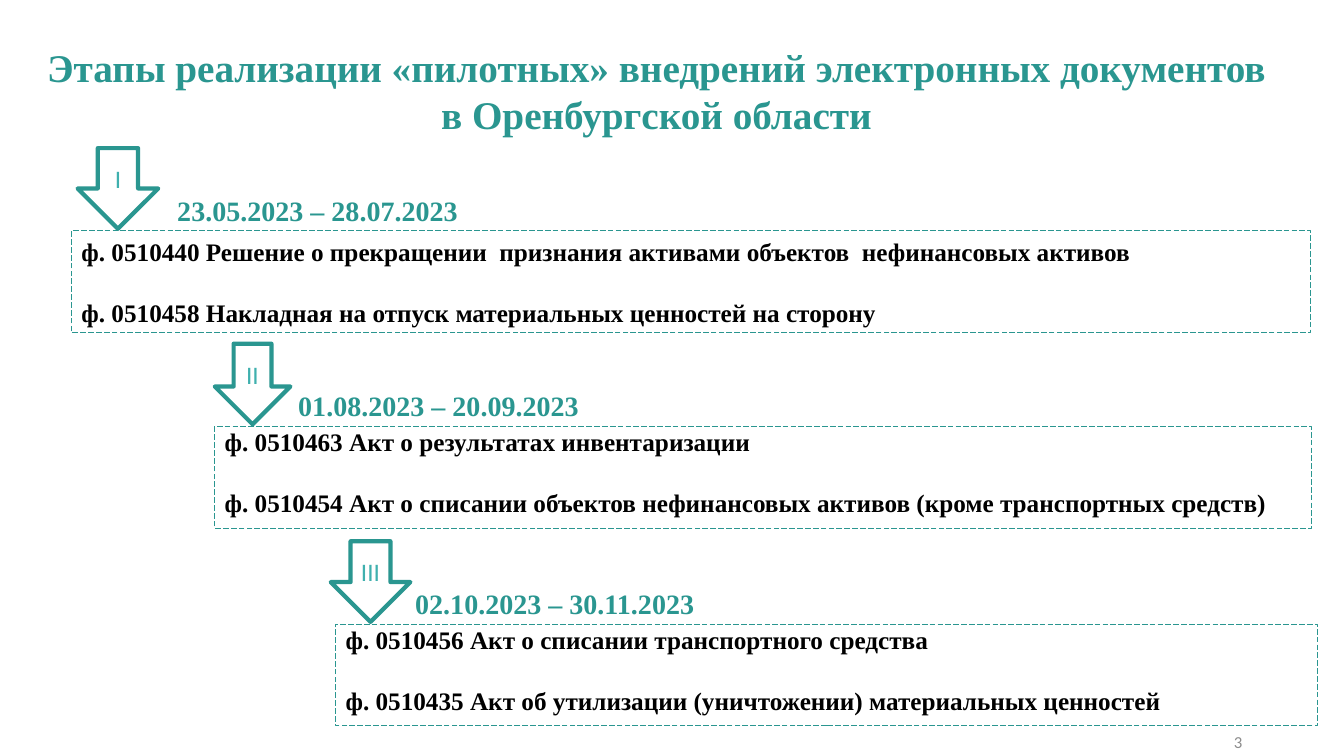
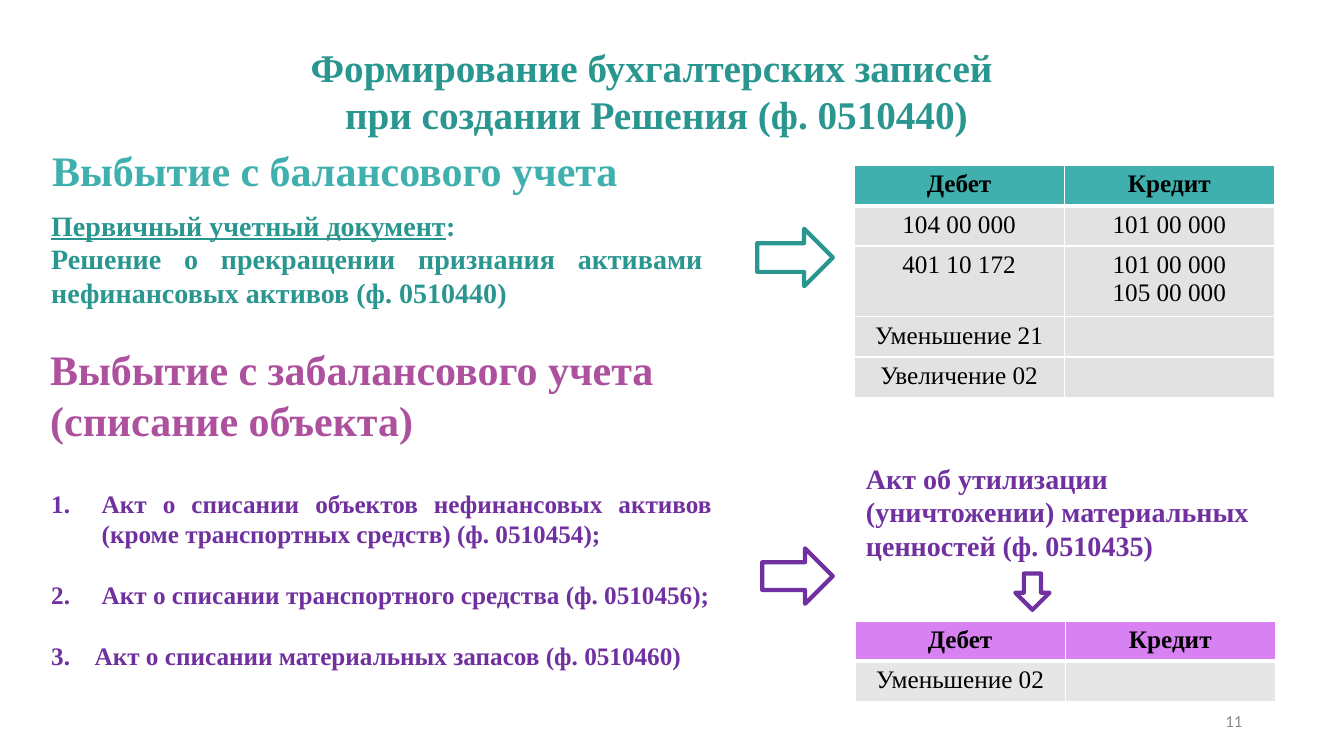
from lxml import etree
from pptx import Presentation
from pptx.dml.color import RGBColor
from pptx.enum.dml import MSO_LINE
from pptx.enum.shapes import MSO_SHAPE
from pptx.enum.text import MSO_ANCHOR, PP_ALIGN
from pptx.oxml.ns import qn
from pptx.util import Pt

LEFT, CENTER, RIGHT, JUSTIFY = PP_ALIGN.LEFT, PP_ALIGN.CENTER, PP_ALIGN.RIGHT, PP_ALIGN.JUSTIFY
TOP, MIDDLE = MSO_ANCHOR.TOP, MSO_ANCHOR.MIDDLE
DOWN_ARROW, RIGHT_ARROW, RECTANGLE = MSO_SHAPE.DOWN_ARROW, MSO_SHAPE.RIGHT_ARROW, MSO_SHAPE.RECTANGLE
LONG_DASH = MSO_LINE.LONG_DASH

EMU_PER_PX = 9144  # 100 px to the inch
SERIF, SANS = "Times New Roman", "Calibri"
COLORS = {
    "teal": "2A9690", "aqua": "3FB0AE", "plum": "AD509E", "purple": "7030A0",
    "lilac": "D881F3", "cell": "E2E2E2", "pale_cell": "E7E6E6",
    "black": "000000", "white": "FFFFFF", "gray": "8C8C8C",
}
TITLE_BOX = (20, 38, 1262, 104)
BLANK_LINE = 22  # points between separated paragraphs

STAGES_TITLE = ["Этапы реализации «пилотных» внедрений электронных документов",
                "в Оренбургской области"]
STAGES = [
    {"number": "I", "dates": "23.05.2023 – 28.07.2023",
     "forms": ["ф. 0510440 Решение о прекращении  признания активами объектов  нефинансовых активов",
               "ф. 0510458 Накладная на отпуск материальных ценностей на сторону"],
     "frame": (71, 229, 1229), "arrow": (77, 80), "dates_left": 166, "inset": 5},
    {"number": "II", "dates": "01.08.2023 – 20.09.2023",
     "forms": ["ф. 0510463 Акт о результатах инвентаризации",
               "ф. 0510454 Акт о списании объектов нефинансовых активов (кроме транспортных средств)"],
     "frame": (213, 423, 1088), "arrow": (213, 75), "dates_left": 286, "inset": 0},
    {"number": "III", "dates": "02.10.2023 – 30.11.2023",
     "forms": ["ф. 0510456 Акт о списании транспортного средства",
               "ф. 0510435 Акт об утилизации (уничтожении) материальных ценностей"],
     "frame": (333, 619, 974), "arrow": (328, 79), "dates_left": 402, "inset": 0},
]

ENTRIES_TITLE = ["Формирование бухгалтерских записей ", "при создании Решения (ф. 0510440)"]
BALANCE_HEADING = ["Выбытие с балансового учета"]
OFF_BALANCE_HEADING = ["Выбытие с забалансового учета", "(списание объекта)"]
PRIMARY_DOCUMENT = [("Первичный учетный документ", ":"),
                    "Решение о прекращении признания активами нефинансовых активов (ф. 0510440)"]
WRITE_OFF_ACTS = [
    ("Акт о списании объектов нефинансовых активов (кроме транспортных средств) (ф. 0510454);", 50),
    ("Акт о списании транспортного средства (ф. 0510456);", 50),
    ("Акт о списании материальных запасов (ф. 0510460)", 43),
]
DISPOSAL_ACT = ["Акт об утилизации (уничтожении) материальных ценностей (ф. 0510435)"]
ACCOUNTS = ["Дебет", "Кредит"]
BALANCE_ENTRIES = [ACCOUNTS, ["104 00 000", "101 00 000"],
                   ["401 10 172", "101 00 000\n105 00 000"],
                   ["Уменьшение 21", ""], ["Увеличение 02", ""]]
OFF_BALANCE_ENTRIES = [ACCOUNTS, ["Уменьшение 02", ""]]


def px(length):
    return int(length * EMU_PER_PX)


def rgb(name):
    return RGBColor.from_string(COLORS[name])


def write(frame, lines, size, color, font=SERIF, bold=True, align=LEFT, gap=0):
    """Fill a frame; a line given as a pair has its first part underlined."""
    frame.text = "\n".join(line if isinstance(line, str) else line[0] for line in lines)
    for index, (paragraph, line) in enumerate(zip(frame.paragraphs, lines)):
        paragraph.alignment = align
        if gap and index:
            paragraph.space_before = Pt(gap)
        if not isinstance(line, str):
            paragraph.runs[0].font.underline = True
            paragraph.add_run().text = line[1]
        for run in paragraph.runs:
            run.font.name, run.font.size, run.font.bold = font, Pt(size), bold
            run.font.color.rgb = rgb(color)


def add_text(slide, box, lines, size, color, anchor=TOP, **style):
    frame = slide.shapes.add_textbox(*map(px, box)).text_frame
    frame.word_wrap = True
    frame.vertical_anchor = anchor
    write(frame, lines, size, color, **style)
    return frame


def add_outline(slide, kind, box, color="teal", width=3):
    shape = slide.shapes.add_shape(kind, *map(px, box))
    shape.shadow.inherit = False
    shape.fill.background()
    shape.line.color.rgb = rgb(color)
    shape.line.width = Pt(width)
    return shape


def start_slide(deck, title, number, number_top):
    slide = deck.slides.add_slide(deck.slide_layouts[6])
    add_text(slide, TITLE_BOX, title, 28, "teal", align=CENTER)
    add_text(slide, (942, number_top, 300, 40), [number], 12, "gray",
             anchor=MIDDLE, font=SANS, bold=False, align=RIGHT)
    return slide


def number_item(paragraph, indent):
    properties = paragraph._p.get_or_add_pPr()
    properties.set("marL", str(px(indent)))
    properties.set("indent", str(-px(indent)))
    etree.SubElement(properties, qn("a:buFont"), typeface="+mj-lt")
    etree.SubElement(properties, qn("a:buAutoNum"), type="arabicPeriod")


def set_borders(cell, bottom):
    """White borders of 1 pt, with the bottom one as given."""
    properties = cell._tc.get_or_add_tcPr()
    for side, width in (("L", 1), ("R", 1), ("T", 1), ("B", bottom)):
        border = etree.SubElement(properties, qn(f"a:ln{side}"), w=str(Pt(width)))
        fill = etree.SubElement(border, qn("a:solidFill"))
        etree.SubElement(fill, qn("a:srgbClr"), val=COLORS["white"])


def add_entries(slide, left, top, rows, header_color, body_color):
    heights = [40 + 30 * max(text.count("\n") for text in row) for row in rows]
    table = slide.shapes.add_table(len(rows), len(ACCOUNTS), px(left), px(top),
                                   px(417), px(sum(heights))).table
    table.horz_banding = False
    for r, (row, height) in enumerate(zip(rows, heights)):
        table.rows[r].height = px(height)
        header = r == 0
        for c, text in enumerate(row):
            cell = table.cell(r, c)
            set_borders(cell, 3 if header else 1)
            cell.fill.solid()
            cell.fill.fore_color.rgb = rgb(header_color if header else body_color)
            write(cell.text_frame, text.split("\n"), 18, "black", bold=header, align=CENTER)


def build_stages(deck):
    slide = start_slide(deck, STAGES_TITLE, "3", 716)
    for stage in STAGES:
        left, top, width = stage["frame"]
        arrow_left, arrow_width = stage["arrow"]
        arrow = add_outline(slide, DOWN_ARROW, (arrow_left, top - 82, arrow_width, 80))
        label = arrow.text_frame
        label.margin_left = label.margin_right = 0
        label.vertical_anchor = MIDDLE
        write(label, [stage["number"]], 18, "aqua", font=SANS, bold=False, align=CENTER)

        box = add_outline(slide, RECTANGLE, (left, top, width, 101), width=0.5)
        box.line.dash_style = LONG_DASH
        forms = box.text_frame
        forms.vertical_anchor = TOP
        forms.margin_top = px(stage["inset"])
        write(forms, stage["forms"], 18, "black", gap=BLANK_LINE)
        add_text(slide, (stage["dates_left"], top - 42, 310, 44), [stage["dates"]], 20, "teal")


def build_entries(deck):
    slide = start_slide(deck, ENTRIES_TITLE, "11", 695)
    add_text(slide, (42, 138, 783, 61), BALANCE_HEADING, 30, "aqua")
    add_text(slide, (41, 201, 666, 111), PRIMARY_DOCUMENT, 20, "teal",
             anchor=MIDDLE, align=JUSTIFY)
    add_outline(slide, RIGHT_ARROW, (751, 227, 75, 57))
    add_entries(slide, 847, 164, BALANCE_ENTRIES, "aqua", "cell")

    add_text(slide, (40, 336, 624, 111), OFF_BALANCE_HEADING, 30, "plum")
    acts = add_text(slide, (41, 479, 675, 192), [act for act, _ in WRITE_OFF_ACTS], 18, "purple",
                    anchor=MIDDLE, align=JUSTIFY, gap=BLANK_LINE)
    for paragraph, (_, indent) in zip(acts.paragraphs, WRITE_OFF_ACTS):
        number_item(paragraph, indent)
    add_outline(slide, RIGHT_ARROW, (756, 544, 70, 55), "purple")
    add_text(slide, (849, 452, 415, 111), DISPOSAL_ACT, 20, "purple", anchor=MIDDLE)
    add_outline(slide, DOWN_ARROW, (1007, 569, 34, 36), "purple")
    add_entries(slide, 848, 616, OFF_BALANCE_ENTRIES, "lilac", "pale_cell")


def main():
    deck = Presentation()
    deck.slide_width, deck.slide_height = px(1333), px(750)
    build_stages(deck)
    build_entries(deck)
    deck.save("out.pptx")


if __name__ == "__main__":
    main()
